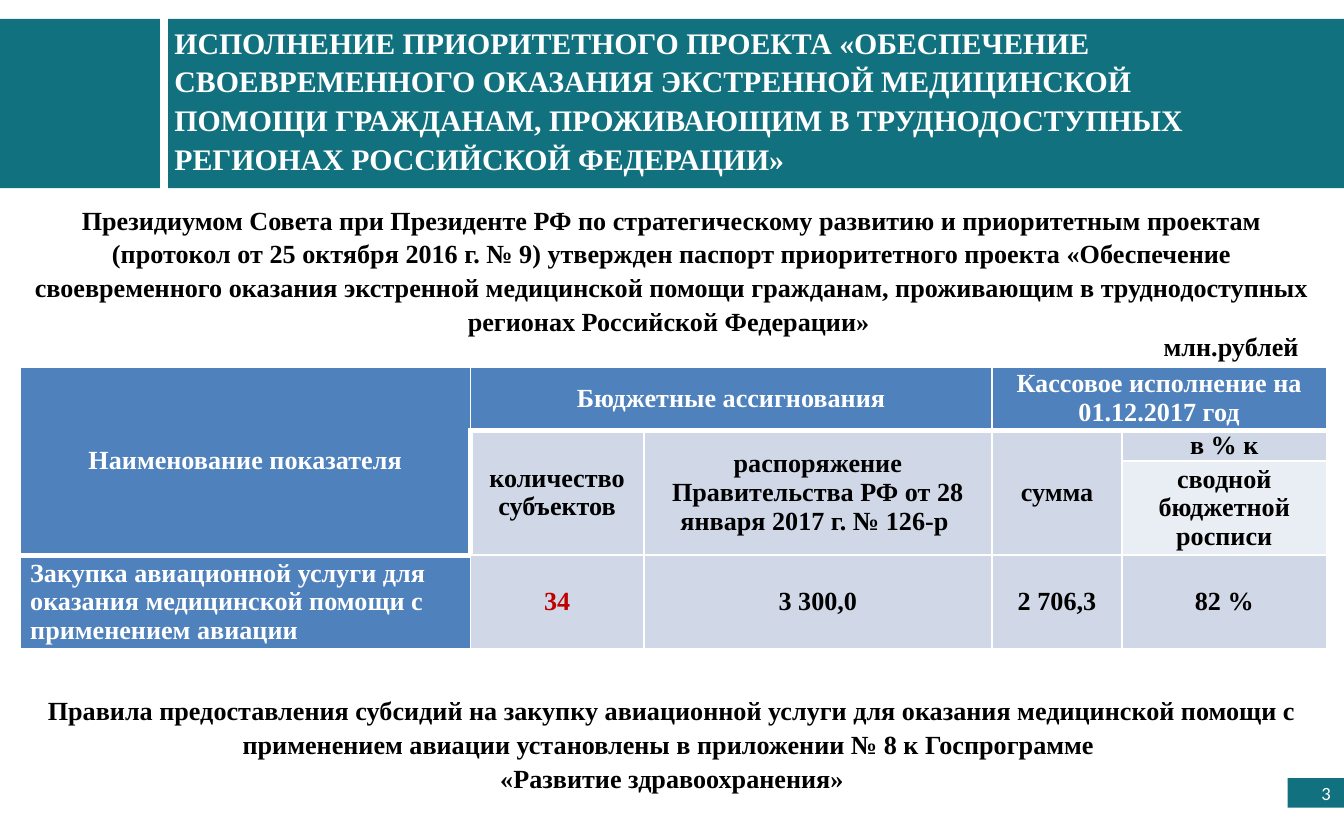
from lxml import etree
from pptx import Presentation
from pptx.dml.color import RGBColor
from pptx.enum import shapes, text
from pptx.oxml import ns
from pptx.util import Pt

WHITE = RGBColor(255, 255, 255)
BLACK = RGBColor(0, 0, 0)
TEAL = RGBColor(0x11, 0x71, 0x7E)
BLUE = RGBColor(0x4F, 0x81, 0xBD)
PALE = RGBColor(0xD0, 0xD8, 0xE8)
LIGHT = RGBColor(0xE9, 0xED, 0xF4)
RED = RGBColor(0xC0, 0, 0)
SERIF = "Times New Roman"
LEFT, MID, RIGHT = text.PP_ALIGN.LEFT, text.PP_ALIGN.CENTER, text.PP_ALIGN.RIGHT

# Content: left, top, width, height in points
BARS = [(90, 10.1, 630, 90.7), (0, 10.1, 85.7, 90.7)]
BADGE = (689.8, 416.9, 30.2, 15.8)
NOTES = [  # place, words, size, colour, alignment, wrap
    ((86.4, 7.9, 609.1, 85), "ИСПОЛНЕНИЕ ПРИОРИТЕТНОГО ПРОЕКТА «ОБЕСПЕЧЕНИЕ "
     "СВОЕВРЕМЕННОГО ОКАЗАНИЯ ЭКСТРЕННОЙ МЕДИЦИНСКОЙ ПОМОЩИ ГРАЖДАНАМ, "
     "ПРОЖИВАЮЩИМ В ТРУДНОДОСТУПНЫХ РЕГИОНАХ РОССИЙСКОЙ ФЕДЕРАЦИИ»",
     16, WHITE, LEFT, True),
    ((616.3, 172.1, 87.8, 24.5), "млн.рублей", 14, BLACK, LEFT, False),
    ((9.4, 104.4, 701.3, 74.9), "Президиумом Совета при Президенте РФ по "
     "стратегическому развитию и приоритетным проектам (протокол от 25 октября "
     "2016 г. № 9) утвержден паспорт приоритетного проекта «Обеспечение "
     "своевременного оказания экстренной медицинской помощи гражданам, "
     "проживающим в труднодоступных регионах Российской Федерации» ",
     14, BLACK, MID, True),
    ((9.4, 367.2, 701.3, 58.3), "Правила предоставления субсидий на закупку "
     "авиационной услуги для оказания медицинской помощи с применением авиации "
     "установлены в приложении № 8 к Госпрограмме \v«Развитие здравоохранения»",
     14, BLACK, MID, True),
]
GRID = (10.8, 196.6, 699.8, 151.2)
COLS = [241.2, 92.9, 186.5, 69.8, 109.4]
ROWS = [33.8, 16.6, 50.4, 50.4]
SPANS = [(0, 0, 2, 0), (0, 1, 0, 2), (0, 3, 0, 4),
         (1, 1, 2, 1), (1, 2, 2, 2), (1, 3, 2, 3)]
CELLS = [
    ["Наименование показателя", "Бюджетные ассигнования", "",
     "Кассовое исполнение на 01.12.2017 год", ""],
    ["", "количество субъектов",
     "распоряжение Правительства РФ от 28 января 2017 г. № 126-р ",
     "сумма", "в % к"],
    ["", "", "", "", "сводной бюджетной росписи"],
    ["Закупка авиационной услуги для оказания медицинской помощи с "
     "применением авиации", "34", "3 300,0", "2 706,3", "82 %"],
]


def style(frame, size, color, align, face=SERIF, bold=True):
    for para in frame.paragraphs:
        para.alignment = align
        for run in para.runs:
            font = run.font
            font.name, font.size, font.bold = face, Pt(size), bold
            font.color.rgb = color


def edge(cell, sides):
    """Draw white cell borders from a dict of side and width."""
    props = cell._tc.get_or_add_tcPr()
    for i, (side, width) in enumerate(sides.items()):
        line = etree.Element(ns.qn("a:ln" + side), w=str(Pt(width)))
        fill = etree.SubElement(line, ns.qn("a:solidFill"))
        etree.SubElement(fill, ns.qn("a:srgbClr"), val=str(WHITE))
        props.insert(i, line)


deck = Presentation()
deck.slide_width, deck.slide_height = Pt(720), Pt(450)
slide = deck.slides.add_slide(deck.slide_layouts[6])


def bar(place):
    rect = slide.shapes.add_shape(shapes.MSO_SHAPE.RECTANGLE, *map(Pt, place))
    rect.shadow.inherit = False
    rect.fill.solid()
    rect.fill.fore_color.rgb = TEAL
    rect.line.fill.background()
    return rect


# Header bars and page number
for place in BARS:
    bar(place)
frame = bar(BADGE).text_frame
frame.text = "3"
frame.vertical_anchor = text.MSO_ANCHOR.MIDDLE
style(frame, 10, WHITE, RIGHT, "Calibri", False)

# Table
table = slide.shapes.add_table(len(ROWS), len(COLS), *map(Pt, GRID)).table
for col, width in zip(table.columns, COLS):
    col.width = Pt(width)
for row, height in zip(table.rows, ROWS):
    row.height = Pt(height)
for top, left, low, right in SPANS:
    table.cell(top, left).merge(table.cell(low, right))

for r, line in enumerate(CELLS):
    for c, words in enumerate(line):
        cell = table.cell(r, c)
        head = r == 0 or c == 0
        cell.text = words
        cell.vertical_anchor = text.MSO_ANCHOR.MIDDLE
        cell.margin_left = cell.margin_right = Pt(5.4)
        cell.margin_top = cell.margin_bottom = 0
        cell.fill.solid()
        cell.fill.fore_color.rgb = BLUE if head else LIGHT if r == 2 and c == 4 else PALE
        color = WHITE if head else RED if (r, c) == (3, 1) else BLACK
        style(cell.text_frame, 14, color, LEFT if (r, c) == (3, 0) else MID)
        # Thick lines part the heading from the body
        edge(cell, {
            "L": 3 if c == 1 and r in (1, 2) else 1,
            "R": 1,
            "T": 3 if r == (1 if c else 3) else 1,
            "B": 3 if r == 0 or (c == 0 and r < 3) else 1,
        })

# Text blocks
for place, words, size, color, align, wrap in NOTES:
    frame = slide.shapes.add_textbox(*map(Pt, place)).text_frame
    frame.word_wrap = wrap
    frame.text = words
    style(frame, size, color, align)
    frame.paragraphs[0].line_spacing = 1.08

deck.save("out.pptx")
